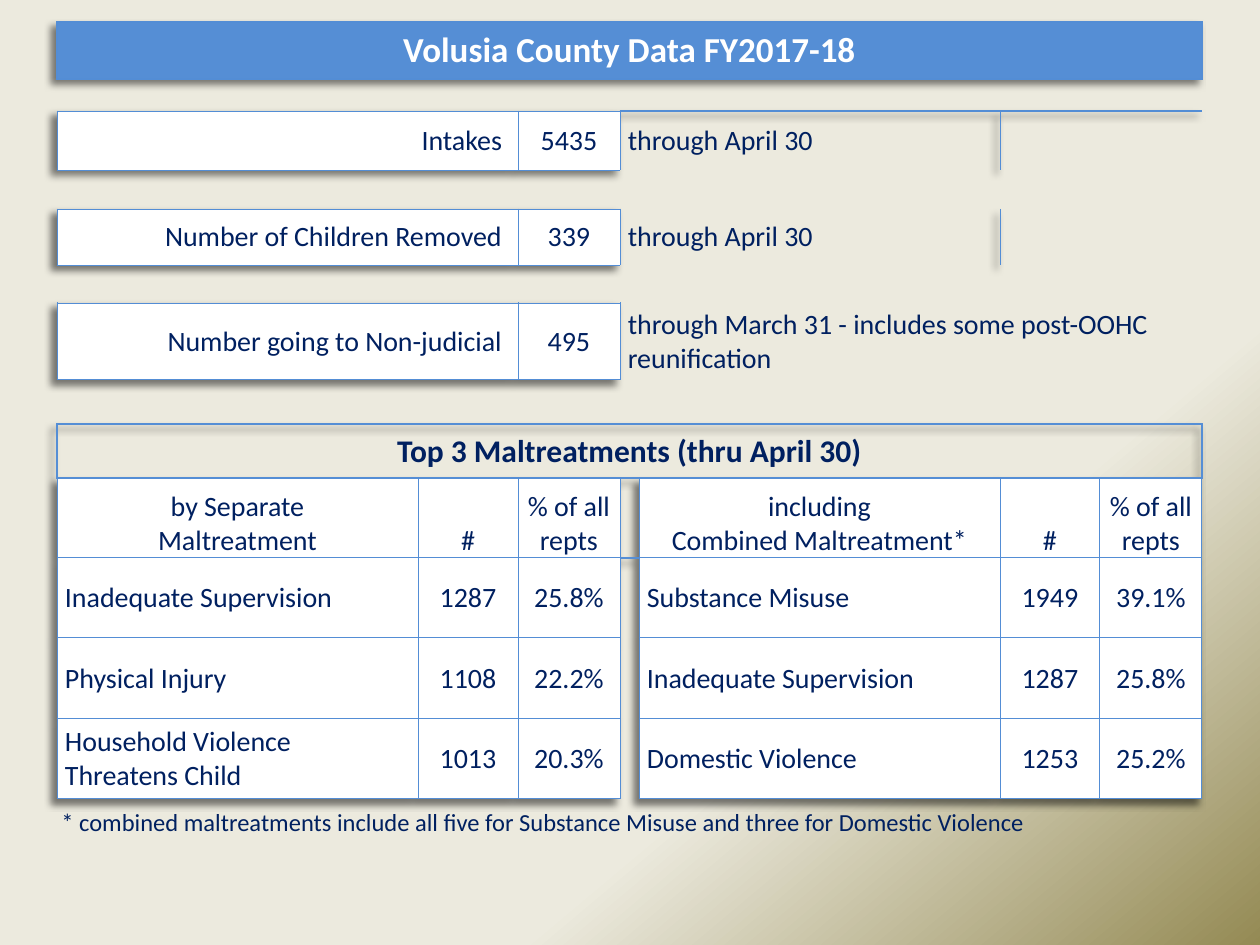
import pptx
import pptx.util
import pptx.dml.color
import pptx.enum.text
import pptx.oxml
import pptx.oxml.ns
from dataclasses import dataclass

PX = 914400 // 126
NS = 'xmlns:a="http://schemas.openxmlformats.org/drawingml/2006/main"'
PLAIN = "{2D5ABB26-0587-4C30-8999-92F81FD0307C}"
ALIGN = pptx.enum.text.PP_ALIGN
ANCHOR = pptx.enum.text.MSO_ANCHOR


@dataclass(frozen=True)
class Theme:
    font: str = "Calibri"
    ink: str = "002060"
    white: str = "FFFFFF"
    band: str = "558ED5"
    line: str = "538DD5"
    stops: tuple = ((0, "948A54"), (31, "ECEADE"), (100, "EEECE1"))
    angle: int = 230
    title: int = 20
    head: int = 18
    body: int = 16
    note: int = 14
    thin: float = 0.5
    thick: float = 1


THEME = Theme()

COLS = [361, 100, 102, 19, 361, 100, 102]
ROWS = [57, 32, 59, 39, 56, 38, 77, 44, 54, 80, 80, 81, 80]

# Row, label, count, period, columns the period spans
COUNTS = [
    (2, "Intakes", "5435", "through April 30", 2),
    (4, "Number of Children Removed", "339", "through April 30", 2),
    (6, "Number going to Non-judicial", "495",
     "through March 31 - includes some post-OOHC\vreunification", 4),
]
# First column, header row, then the three leading kinds
GROUPS = [
    (0, [("by Separate\vMaltreatment", "#", "% of all repts"),
         ("Inadequate Supervision", "1287", "25.8%"),
         ("Physical Injury", "1108", "22.2%"),
         ("Household Violence\vThreatens Child", "1013", "20.3%")]),
    (4, [("including\vCombined Maltreatment*", "#", "% of all repts"),
         ("Substance Misuse", "1949", "39.1%"),
         ("Inadequate Supervision", "1287", "25.8%"),
         ("Domestic Violence", "1253", "25.2%")]),
]
NOTE = ("* combined maltreatments include all five for Substance Misuse "
        "and three for Domestic Violence")


def px(n):
    return pptx.util.Emu(n * PX)


def rgb(code):
    return pptx.dml.color.RGBColor.from_string(code)


def style(frame, size, color, bold=False, align=ALIGN.LEFT):
    for para in frame.paragraphs:
        para.alignment = align
        for run in para.runs:
            run.font.name = THEME.font
            run.font.size = pptx.util.Pt(size)
            run.font.bold = bold
            run.font.color.rgb = rgb(color)


def paint(slide):
    """Gradient background."""
    stops = "".join(f'<a:gs pos="{pos * 1000}"><a:srgbClr val="{code}"/></a:gs>'
                    for pos, code in THEME.stops)
    back = pptx.oxml.parse_xml(
        '<p:bg xmlns:p="http://schemas.openxmlformats.org/presentationml/2006/main" '
        f'{NS}><p:bgPr><a:gradFill rotWithShape="1"><a:gsLst>{stops}</a:gsLst>'
        f'<a:lin ang="{THEME.angle * 60000}" scaled="0"/></a:gradFill>'
        '<a:effectLst/></p:bgPr></p:bg>')
    slide.element.cSld.insert(0, back)


def grid(slide):
    """Plain table with small empty cells and a soft shadow."""
    frame = slide.shapes.add_table(len(ROWS), len(COLS), px(57), px(22),
                                   px(sum(COLS)), px(sum(ROWS)))
    table = frame.table
    for col, wide in zip(table.columns, COLS):
        col.width = px(wide)
    for row, high in zip(table.rows, ROWS):
        row.height = px(high)
    table.first_row = table.horz_banding = False
    props = table._tbl.tblPr
    props.find(pptx.oxml.ns.qn("a:tableStyleId")).text = PLAIN
    props.insert(0, pptx.oxml.parse_xml(
        f'<a:effectLst {NS}><a:outerShdw blurRad="50800" dist="50800" '
        'dir="8100000" algn="tr" rotWithShape="0"><a:srgbClr val="000000">'
        '<a:alpha val="50000"/></a:srgbClr></a:outerShdw></a:effectLst>'))
    for cell in table.iter_cells():
        cell.fill.background()
        cell.margin_left = cell.margin_right = cell.margin_top = px(1)
        cell.margin_bottom = 0
        para = cell.text_frame.paragraphs[0]._p
        para.append(pptx.oxml.parse_xml(f'<a:endParaRPr {NS} sz="800"/>'))
    return table


def fill(table, row, col, text, span=1, left=1, right=1, back=None,
         anchor=ANCHOR.MIDDLE, size=THEME.body, color=THEME.ink, **look):
    cell = table.cell(row, col)
    if span > 1:
        cell.merge(table.cell(row, col + span - 1))
    cell.text = text
    style(cell.text_frame, size, color, **look)
    cell.vertical_anchor = anchor
    cell.margin_left, cell.margin_right = px(left), px(right)
    if back:
        cell.fill.solid()
        cell.fill.fore_color.rgb = rgb(back)


def frame(edges, row, col, span=1, pen=(THEME.line, THEME.thin)):
    """Note all sides of a cell, and the same sides of its neighbours."""
    for c in range(col, col + span):
        for side, other, dr, dc in (("L", "R", 0, -1), ("R", "L", 0, 1),
                                    ("T", "B", -1, 0), ("B", "T", 1, 0)):
            edges.setdefault((row, c, side), pen)
            near = (row + dr, c + dc)
            if 0 <= near[0] < len(ROWS) and 0 <= near[1] < len(COLS):
                edges.setdefault((*near, other), pen)


def rule(table, edges):
    """Draw the noted sides, in the order the file format asks for."""
    for row in range(len(ROWS)):
        for col in range(len(COLS)):
            props = table.cell(row, col)._tc.get_or_add_tcPr()
            sides = [s for s in "LRTB" if (row, col, s) in edges]
            for spot, side in enumerate(sides):
                color, width = edges[row, col, side]
                props.insert(spot, pptx.oxml.parse_xml(
                    f'<a:ln{side} {NS} w="{int(width * 12700)}"><a:solidFill>'
                    f'<a:srgbClr val="{color}"/></a:solidFill></a:ln{side}>'))


def note(slide):
    box = slide.shapes.add_textbox(px(49), px(801), px(998), px(72))
    box.text_frame.word_wrap = False
    box.text_frame.text = NOTE
    style(box.text_frame, THEME.note, THEME.ink)


def main():
    deck = pptx.Presentation()
    deck.slide_width, deck.slide_height = px(1260), px(945)
    slide = deck.slides.add_slide(deck.slide_layouts[6])
    paint(slide)
    note(slide)
    table = grid(slide)
    edges = {}

    # Title and section heading
    fill(table, 0, 0, "Volusia County Data FY2017-18", 7, back=THEME.band,
         size=THEME.title, color=THEME.white, bold=True, align=ALIGN.CENTER)
    frame(edges, 0, 0, 7, (THEME.line, THEME.thick))
    fill(table, 8, 0, "Top 3 Maltreatments (thru April 30)", 7,
         size=THEME.head, bold=True, align=ALIGN.CENTER)
    frame(edges, 8, 0, 7, (THEME.band, THEME.thick))

    # Yearly counts
    for row, label, count, period, span in COUNTS:
        fill(table, row, 0, label, 2, right=16, back=THEME.white,
             align=ALIGN.RIGHT)
        fill(table, row, 2, count, back=THEME.white, align=ALIGN.CENTER)
        fill(table, row, 3, period, span, left=8)
        frame(edges, row, 0, 2)
        frame(edges, row, 2)

    # Leading kinds, side by side
    for first, lines in GROUPS:
        for row, line in enumerate(lines, 9):
            for col, text in enumerate(line, first):
                head, name = row == 9, col == first
                fill(table, row, col, text, back=THEME.white,
                     left=8 if name and not head else 1,
                     anchor=ANCHOR.BOTTOM if head else ANCHOR.MIDDLE,
                     align=ALIGN.LEFT if name and not head else ALIGN.CENTER)
                frame(edges, row, col)

    rule(table, edges)
    deck.save("out.pptx")


if __name__ == "__main__":
    main()
